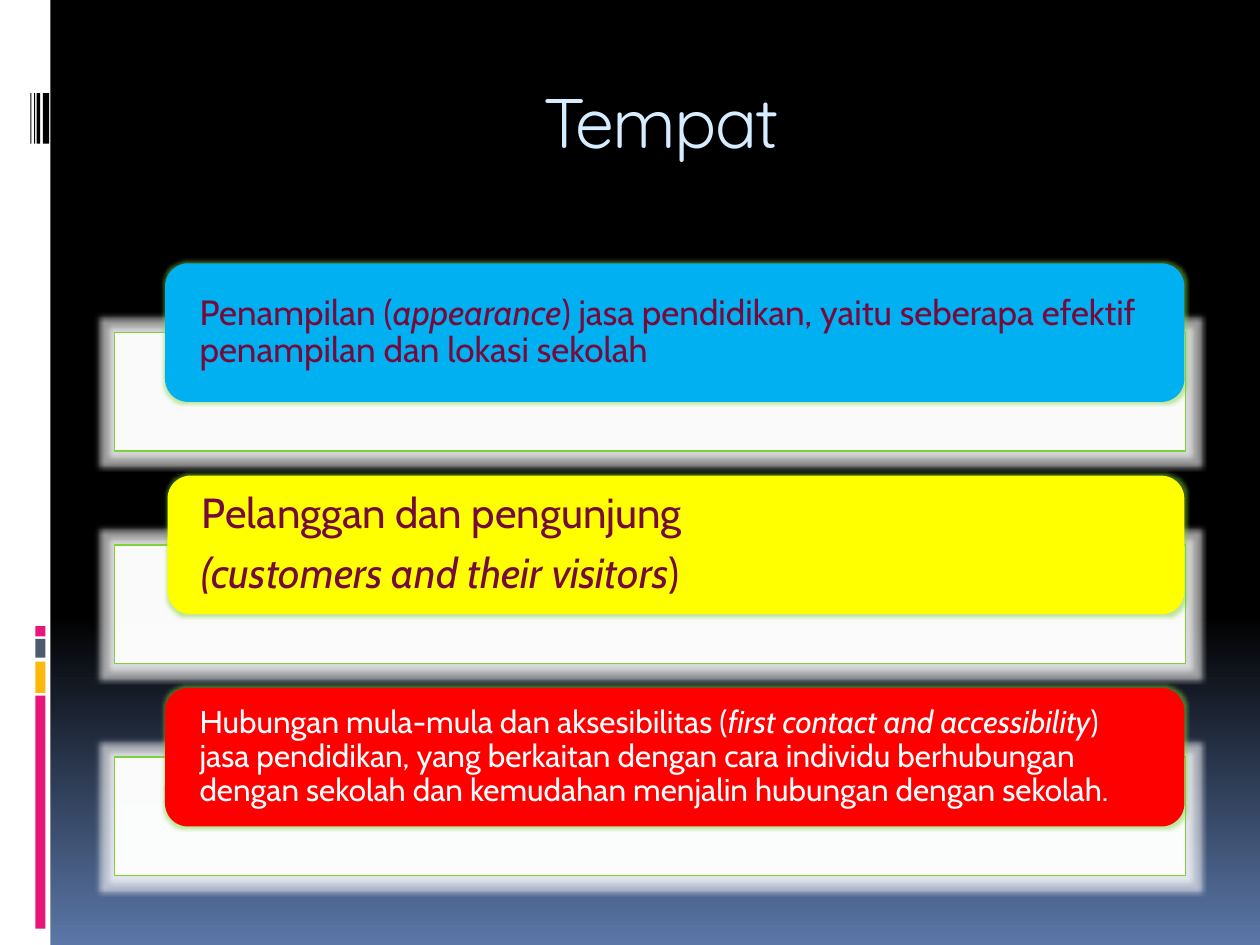
from lxml import etree
from pptx import Presentation
from pptx import util as u
from pptx.dml.color import RGBColor
from pptx.enum import shapes, text
from pptx.oxml.ns import qn

COLORS = {
    "white": "FFFFFF", "black": "000000", "dusk": "5B77A8", "title": "D6ECFF",
    "pink": "EA157A", "amber": "FEB80A", "slate": "4E5B6F", "green": "7FD13B",
    "blue": "00B0F0", "yellow": "FFFF00", "red": "FF0000", "plum": "750B3D",
}


def rgb(name):
    return RGBColor.from_string(COLORS[name])


class SlideStyle:
    heading_font = "Quicksand"
    body_font = "Cabin"

    def __init__(self, slide):
        self.slide = slide

    def background(self):
        fill = self.slide.background.fill
        fill.gradient()
        fill.gradient_angle = 270
        for stop, color, position in zip(fill.gradient_stops, ("black", "dusk"), (0.65, 1)):
            stop.color.rgb = rgb(color)
            stop.position = position

    def block(self, left, top, width, height, color, kind=shapes.MSO_SHAPE.RECTANGLE):
        block = self.slide.shapes.add_shape(kind, *map(u.Inches, (left, top, width, height)))
        block.shadow.inherit = False
        block.fill.solid()
        block.fill.fore_color.rgb = rgb(color)
        block.line.fill.background()
        return block

    def glow(self, block, color, radius, opacity):
        effects = block._element.spPr.find(qn("a:effectLst"))
        glow = etree.SubElement(effects, qn("a:glow"), rad=str(u.Inches(radius)))
        tint = etree.SubElement(glow, qn("a:srgbClr"), val=COLORS[color])
        etree.SubElement(tint, qn("a:alpha"), val=str(opacity * 1000))

    def title(self, wording):
        box = self.slide.shapes.add_textbox(*map(u.Inches, (1, 0.56, 8.5, 0.8)))
        frame = box.text_frame
        frame.word_wrap = True
        frame.vertical_anchor = text.MSO_ANCHOR.MIDDLE
        heading = frame.paragraphs[0]
        heading.alignment = text.PP_ALIGN.CENTER
        run = heading.add_run()
        run.text = wording
        run.font.name = self.heading_font
        run.font.size = u.Pt(40)
        run.font.color.rgb = rgb("title")
        run._r.get_or_add_rPr().set("spc", "-100")

    def panel(self, top):
        """Draw the pale, nearly opaque strip behind a card."""
        panel = self.block(0.91, top, 8.5, 0.94, "white")
        tint = panel._element.spPr.find(qn("a:solidFill"))[0]
        etree.SubElement(tint, qn("a:alpha"), val="90000")
        panel.line.color.rgb = rgb("green")
        panel.line.width = u.Pt(0.94)
        self.glow(panel, "white", 0.08, 60)

    def card(self, left, top, fill, ink, size, paragraphs):
        """Draw a rounded card; each paragraph is a list of (wording, italic)."""
        card = self.block(left, top, 9.4 - left, 1.1, fill,
                          shapes.MSO_SHAPE.ROUNDED_RECTANGLE)
        self.glow(card, "green", 0.04, 50)
        frame = card.text_frame
        frame.word_wrap = True
        frame.vertical_anchor = text.MSO_ANCHOR.MIDDLE
        frame.margin_left = frame.margin_right = u.Inches(0.22)
        frame.margin_top = frame.margin_bottom = 0
        for index, runs in enumerate(paragraphs):
            paragraph = frame.add_paragraph() if index else frame.paragraphs[0]
            paragraph.alignment = text.PP_ALIGN.LEFT
            paragraph.line_spacing = 0.9
            paragraph.space_after = u.Pt(0.35 * size)
            paragraph.font.name = self.body_font
            paragraph.font.size = u.Pt(size)
            paragraph.font.color.rgb = rgb(ink)
            for wording, italic in runs:
                run = paragraph.add_run()
                run.text = wording
                if italic:
                    run.font.italic = True


SIDE_BLOCKS = [  # top, height, color
    (5.52, 1.85, "pink"), (5.25, 0.25, "amber"),
    (5.07, 0.15, "slate"), (4.97, 0.08, "pink"),
]
BARCODE = [(0.34, 0.05), (0.29, 0.03), (0.27, 0.01), (0.24, 0.01)]  # left, width
CARDS = [  # left, fill, ink, size, paragraphs
    (1.31, "blue", "plum", 20, [[
        ("Penampilan (", False), ("appearance", True),
        (") jasa pendidikan, yaitu seberapa efektif penampilan dan lokasi sekolah", False)]]),
    (1.33, "yellow", "plum", 24, [
        [("Pelanggan dan pengunjung", False)],
        [("(customers and their visitors", True), (")", False)]]),
    (1.31, "red", "white", 18, [[
        ("Hubungan mula-mula dan aksesibilitas (", False),
        ("first contact and accessibility", True),
        (") jasa pendidikan, yang berkaitan dengan cara individu berhubungan "
         "dengan sekolah dan kemudahan menjalin hubungan dengan sekolah.", False)]]),
]
FIRST_CARD_TOP, CARD_PITCH, PANEL_DROP = 2.09, 1.685, 0.55


def main():
    deck = Presentation()
    deck.slide_width, deck.slide_height = u.Inches(10), u.Inches(7.5)
    style = SlideStyle(deck.slides.add_slide(deck.slide_layouts[6]))
    style.background()
    style.block(0, 0, 0.4, 7.5, "white")
    for top, height, color in SIDE_BLOCKS:
        style.block(0.28, top, 0.08, height, color)
    for left, width in BARCODE:
        style.block(left, 0.74, width, 0.4, "black")
    style.title("Tempat")
    for row, (left, *content) in enumerate(CARDS):
        top = FIRST_CARD_TOP + row * CARD_PITCH
        style.panel(top + PANEL_DROP)
        style.card(left, top, *content)
    deck.save("out.pptx")


if __name__ == "__main__":
    main()
